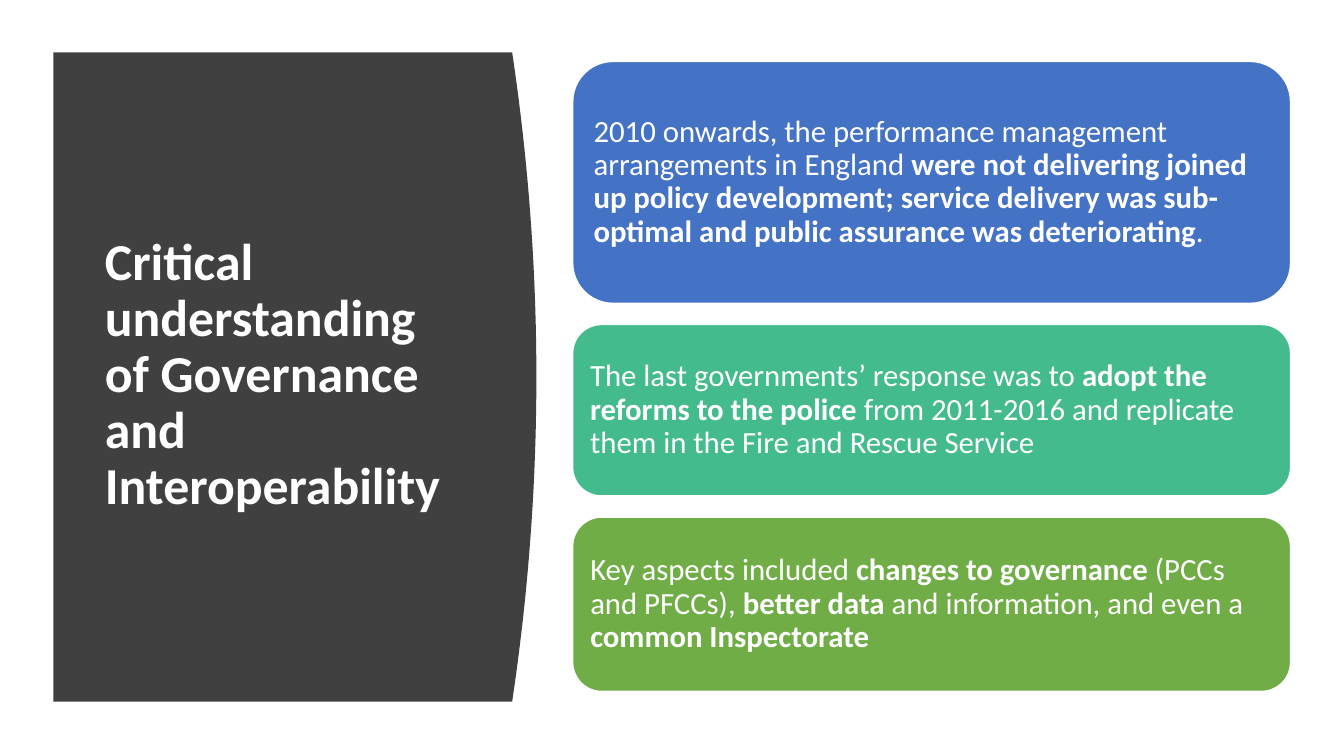
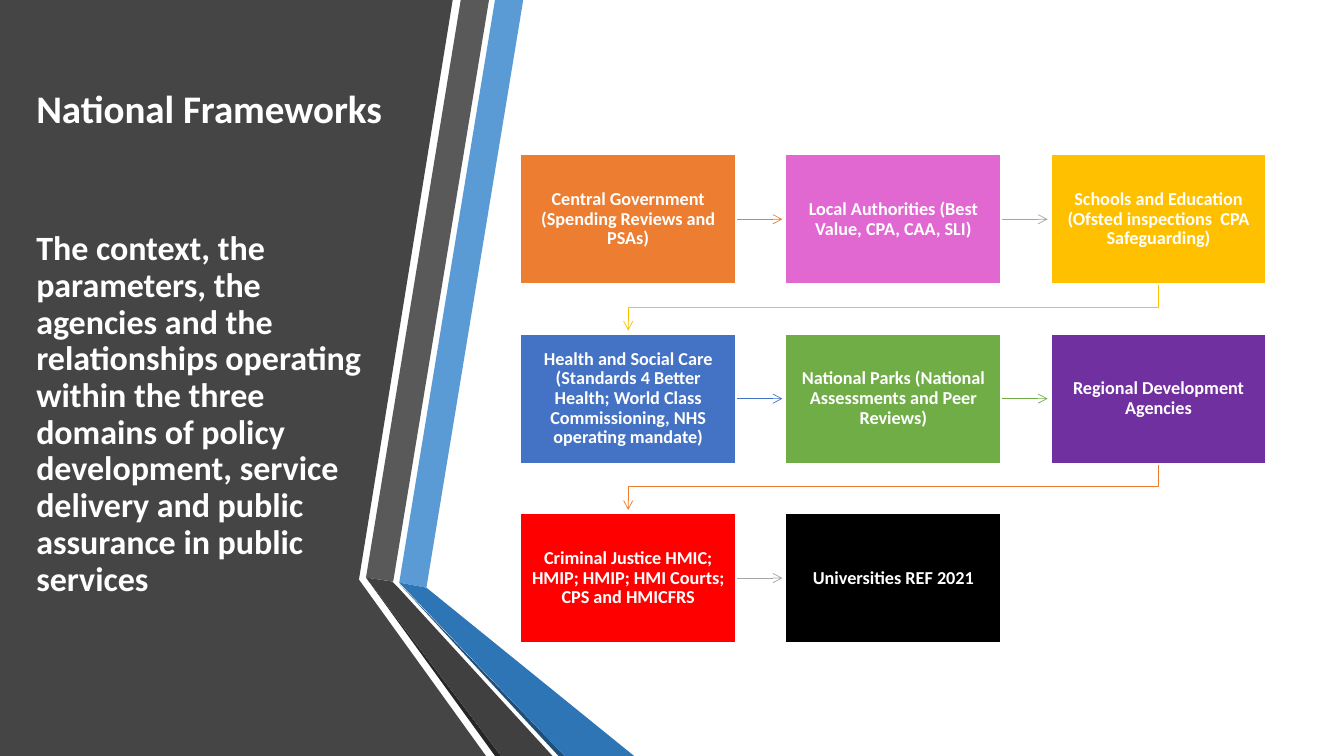
from dataclasses import dataclass

from lxml import etree
from pptx import Presentation
from pptx.dml.color import RGBColor
from pptx.enum.shapes import MSO_CONNECTOR, MSO_SHAPE
from pptx.enum.text import MSO_ANCHOR, MSO_AUTO_SIZE, PP_ALIGN
from pptx.oxml.ns import qn
from pptx.util import Inches, Pt

RECTANGLE, ROUNDED = MSO_SHAPE.RECTANGLE, MSO_SHAPE.ROUNDED_RECTANGLE
STRAIGHT, ELBOW = MSO_CONNECTOR.STRAIGHT, MSO_CONNECTOR.ELBOW
TOP, MIDDLE = MSO_ANCHOR.TOP, MSO_ANCHOR.MIDDLE
LEFT, CENTER = PP_ALIGN.LEFT, PP_ALIGN.CENTER
NO_AUTOFIT = MSO_AUTO_SIZE.NONE
QUARTER_TURN = "5400000"


@dataclass(frozen=True)
class Theme:
    font: str = "Calibri"
    white: str = "FFFFFF"
    black: str = "000000"
    charcoal: str = "404040"
    slate: str = "454545"
    grey: str = "595959"
    dark_grey: str = "262626"
    silver: str = "A5A5A5"
    sky: str = "5B9BD5"
    ocean: str = "2E75B6"
    navy: str = "1F4E79"
    blue: str = "4472C4"
    teal: str = "43BB8D"
    green: str = "70AD47"
    orange: str = "ED7D31"
    pink: str = "E268D1"
    gold: str = "FFC000"
    purple: str = "7030A0"
    red: str = "FF0000"
    title_size: float = 37
    heading_size: float = 27.9
    context_size: float = 24.3
    card_size: float = 22
    agency_size: float = 13
    line_spacing: float = 0.9


THEME = Theme()


def paint(shape, fill, border=None):
    shape.shadow.inherit = False
    shape.fill.solid()
    shape.fill.fore_color.rgb = RGBColor.from_string(fill)
    if border:
        shape.line.color.rgb = RGBColor.from_string(THEME.white)
        shape.line.width = Pt(border)
    else:
        shape.line.fill.background()


def write(frame, paragraphs, alignment, frame_format):
    frame_format = {"word_wrap": True, "auto_size": NO_AUTOFIT, "vertical_anchor": MIDDLE} | frame_format
    for name, value in frame_format.items():
        setattr(frame, name, value)
    for index, (size, space_before, runs) in enumerate(paragraphs):
        paragraph = frame.add_paragraph() if index else frame.paragraphs[0]
        paragraph_format = {
            "alignment": alignment,
            "line_spacing": THEME.line_spacing,
            "space_before": Pt(space_before),
        }
        for name, value in paragraph_format.items():
            setattr(paragraph, name, value)
        for text, bold in runs:
            run = paragraph.add_run()
            run.text = text
            for name, value in {"name": THEME.font, "size": Pt(size), "bold": bold}.items():
                setattr(run.font, name, value)
            run.font.color.rgb = RGBColor.from_string(THEME.white)


MARGINS = ("margin_left", "margin_top", "margin_right", "margin_bottom")
CARD_FRAME = dict.fromkeys(MARGINS, Inches(0.09))
AGENCY_FRAME = dict.fromkeys(MARGINS, Inches(0.11))

PANEL_TOP, PANEL_BOTTOM, PANEL_EDGE, PANEL_BULGE = 0.52, 6.96, 5.08, 0.24
CURVE_STEPS = 40
curve = []
for step in range(CURVE_STEPS + 1):
    progress = step / CURVE_STEPS
    curve.append((
        PANEL_EDGE + PANEL_BULGE * 4 * progress * (1 - progress),
        PANEL_TOP + (PANEL_BOTTOM - PANEL_TOP) * progress,
    ))

SLIDES = [
    {
        "outlines": [
            (THEME.charcoal, [(0.53, PANEL_TOP), *curve, (0.53, PANEL_BOTTOM)]),
        ],
        "title_area": (0.94, 1.11, 3.74, 5.24),
        "title_frame": {},
        "title": [
            (THEME.title_size, 0, [("Critical understanding of Governance and Interoperability", True)]),
        ],
    },
    {
        "outlines": [
            (THEME.slate, [(0, 0), (4.49, 0), (3.56, 5.75), (4.82, 7.5), (0, 7.5)]),
            (THEME.sky, [(3.96, 5.78), (4.23, 5.83), (5.19, 0), (4.91, 0)]),
            (THEME.grey, [(4.85, 0), (4.57, 0), (3.63, 5.73), (3.9, 5.77)]),
            (THEME.dark_grey, [(3.63, 5.73), (4.91, 7.5), (4.97, 7.5)]),
            (THEME.navy, [(3.96, 5.79), (5.54, 7.5), (5.6, 7.5)]),
            (THEME.ocean, [(3.96, 5.78), (5.6, 7.5), (6.29, 7.5), (4.23, 5.83)]),
            (THEME.charcoal, [(3.63, 5.73), (4.97, 7.5), (5.48, 7.5), (3.95, 5.83), (3.89, 5.77)]),
        ],
        "title_area": (0.26, 0.75, 3.7, 5.86),
        "title_frame": {"vertical_anchor": TOP, "margin_top": Inches(0.14)},
        "title": [
            (THEME.heading_size, 0, [("National Frameworks", True)]),
            (THEME.context_size, 71, [(
                "The context, the parameters, the agencies and the relationships operating within "
                "the three domains of policy development, service delivery and public assurance "
                "in public services", True)]),
        ],
    },
]

CARDS = [
    (THEME.blue, 2.4, [
        ("2010 onwards, the performance management arrangements in England ", False),
        ("were not delivering joined up policy development; service delivery was sub-optimal "
         "and public assurance was deteriorating", True),
        (".", False),
    ]),
    (THEME.teal, 1.7, [
        ("The last governments’ response was to ", False),
        ("adopt the reforms to the police", True),
        (" from 2011-2016 and replicate them in the Fire and Rescue Service", False),
    ]),
    (THEME.green, 1.73, [
        ("Key aspects included ", False),
        ("changes to governance ", True),
        ("(PCCs and PFCCs), ", False),
        ("better data ", True),
        ("and information, and even a ", False),
        ("common Inspectorate", True),
    ]),
]

AGENCIES = [
    ("Central Government (Spending Reviews and PSAs)", THEME.orange, THEME.orange),
    ("Local Authorities (Best Value, CPA, CAA, SLI)", THEME.pink, THEME.silver),
    ("Schools and Education (Ofsted inspections  CPA Safeguarding)", THEME.gold, THEME.gold),
    ("Health and Social Care (Standards 4 Better Health; World Class Commissioning, "
     "NHS operating mandate)", THEME.blue, THEME.blue),
    ("National Parks (National Assessments and Peer Reviews)", THEME.green, THEME.green),
    ("Regional Development Agencies", THEME.purple, THEME.orange),
    ("Criminal Justice HMIC; HMIP; HMIP; HMI Courts; CPS and HMICFRS", THEME.red, THEME.silver),
    ("Universities REF 2021", THEME.black, None),
]

deck = Presentation()
deck.slide_width, deck.slide_height = Inches(13.33), Inches(7.5)
title_only = deck.slide_layouts[5]

for content in SLIDES:
    slide = deck.slides.add_slide(title_only)
    for color, points in content["outlines"]:
        start, *rest = [(Inches(x), Inches(y)) for x, y in points]
        builder = slide.shapes.build_freeform(*start)
        builder.add_line_segments(rest, close=True)
        paint(builder.convert_to_shape(), color)
    title = slide.shapes.title
    slide.shapes._spTree.append(title._element)
    for name, value in zip(("left", "top", "width", "height"), content["title_area"]):
        setattr(title, name, Inches(value))
    write(title.text_frame, content["title"], LEFT, content["title_frame"])

governance, frameworks = deck.slides

CARD_GAP = 0.21
card_top = 0.61
for color, height, runs in CARDS:
    card = governance.shapes.add_shape(
        ROUNDED, Inches(5.68), Inches(card_top), Inches(7.12), Inches(height))
    paint(card, color, border=1)
    write(card.text_frame, [(THEME.card_size, 0, runs)], LEFT, CARD_FRAME)
    card_top += height + CARD_GAP

COLUMNS = 3
GRID_LEFT, GRID_TOP = 5.16, 1.53
AGENCY_WIDTH, AGENCY_HEIGHT = 2.14, 1.29
COLUMN_PITCH, ROW_PITCH = 2.63, 1.78
ARROW_LENGTH = 0.46

for index, (agency_name, color, arrow_color) in enumerate(AGENCIES):
    row, column = divmod(index, COLUMNS)
    left = GRID_LEFT + column * COLUMN_PITCH
    top = GRID_TOP + row * ROW_PITCH
    if arrow_color:
        wraps = column == COLUMNS - 1
        if wraps:
            half_run = (COLUMNS - 1) * COLUMN_PITCH / 2
            center_x = left + AGENCY_WIDTH / 2 - half_run
            center_y = top + AGENCY_HEIGHT + ARROW_LENGTH / 2
            ends = (center_x - ARROW_LENGTH / 2, center_y - half_run,
                    center_x + ARROW_LENGTH / 2, center_y + half_run)
        else:
            middle = top + AGENCY_HEIGHT / 2
            right = left + AGENCY_WIDTH
            ends = (right, middle, right + ARROW_LENGTH, middle)
        arrow = frameworks.shapes.add_connector(
            ELBOW if wraps else STRAIGHT, *[Inches(value) for value in ends])
        arrow.line.color.rgb = RGBColor.from_string(arrow_color)
        arrow.line.width = Pt(0.5)
        properties = arrow._element.spPr
        etree.SubElement(properties.find(qn("a:ln")), qn("a:tailEnd"), type="arrow")
        etree.SubElement(properties, qn("a:effectLst"))
        if wraps:
            properties.find(qn("a:xfrm")).set("rot", QUARTER_TURN)
    agency = frameworks.shapes.add_shape(
        RECTANGLE, Inches(left), Inches(top), Inches(AGENCY_WIDTH), Inches(AGENCY_HEIGHT))
    paint(agency, color, border=1.5)
    write(agency.text_frame, [(THEME.agency_size, 0, [(agency_name, True)])], CENTER, AGENCY_FRAME)

deck.save("out.pptx")
